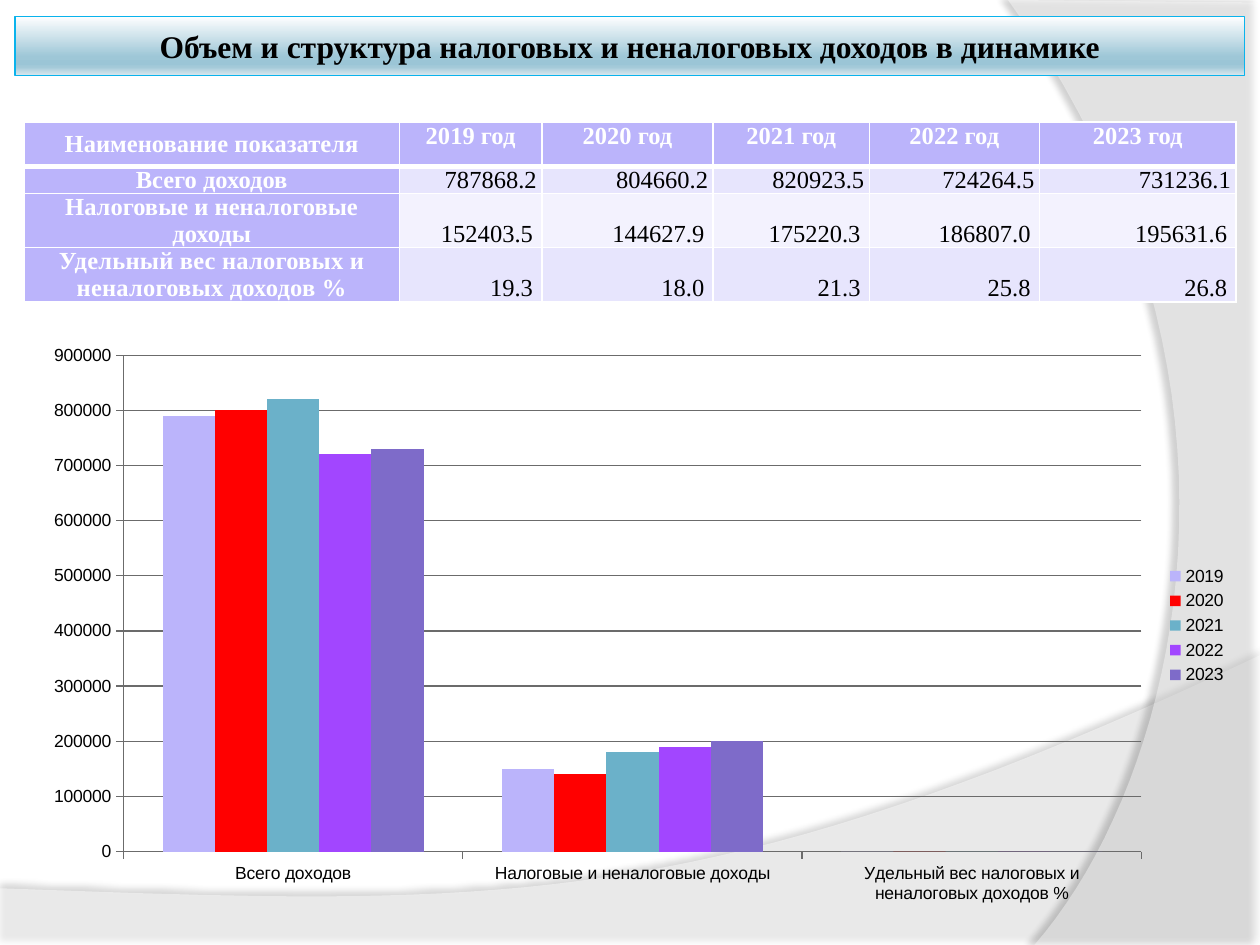
from lxml import etree
from pptx import Presentation
from pptx.chart.data import CategoryChartData
from pptx.dml.color import RGBColor
from pptx.enum.chart import XL_CHART_TYPE, XL_LEGEND_POSITION, XL_TICK_MARK
from pptx.enum.text import MSO_ANCHOR, PP_ALIGN
from pptx.oxml import parse_xml
from pptx.oxml.ns import nsdecls, qn
from pptx.util import Inches, Pt

CENTER, RIGHT = PP_ALIGN.CENTER, PP_ALIGN.RIGHT
TOP, MIDDLE, BOTTOM = MSO_ANCHOR.TOP, MSO_ANCHOR.MIDDLE, MSO_ANCHOR.BOTTOM
CLUSTERED = XL_CHART_TYPE.COLUMN_CLUSTERED
LEGEND_RIGHT = XL_LEGEND_POSITION.RIGHT
OUTSIDE, NO_TICK = XL_TICK_MARK.OUTSIDE, XL_TICK_MARK.NONE

SERIF, SANS = "Times New Roman", "Arial"
WHITE, BLACK, LILAC, GRAY = "FFFFFF", "000000", "BBB4FB", "6B6B6B"
TITLE = "Объем и структура налоговых и неналоговых доходов в динамике"
TITLE_STOPS = [(0, "FEFEFF"), (68, "9EC7D7"), (81, "9BC5D6"), (86, "A5CAD9"), (100, "DAE8EE")]
YEARS = ["2019", "2020", "2021", "2022", "2023"]
SERIES_COLORS = [LILAC, "FF0000", "6BB1C9", "A246FF", "7E6BC9"]
INDICATORS = {
    "Всего доходов": [787868.2, 804660.2, 820923.5, 724264.5, 731236.1],
    "Налоговые и неналоговые доходы": [152403.5, 144627.9, 175220.3, 186807.0, 195631.6],
    "Удельный вес налоговых и неналоговых доходов %": [19.3, 18.0, 21.3, 25.8, 26.8],
}
ROW_FILLS = ["E7E5FD", "F3F2FE", "E7E5FD"]
COLUMN_WIDTHS = [2.98, 1.13, 1.36, 1.24, 1.35, 1.56]
ROW_HEIGHTS = [0.35, 0.21, 0.42, 0.42]
UNITS_PER_INCH = 1000


def color(value):
    return RGBColor.from_string(value)


def set_solid(fill, value):
    fill.solid()
    fill.fore_color.rgb = color(value)


def write(frame, text, size, value, bold, alignment):
    paragraph = frame.paragraphs[0]
    paragraph.alignment = alignment
    run = paragraph.add_run()
    run.text = text
    run.font.name = SERIF
    run.font.size = Pt(size)
    run.font.bold = bold
    run.font.color.rgb = color(value)
    return run


def curve(points, steps=40):
    weights = (1, 3, 3, 1)
    result = []
    for step in range(1, steps + 1):
        t = step / steps
        factors = [w * (1 - t) ** (3 - i) * t ** i for i, w in enumerate(weights)]
        result.append(tuple(sum(f * p[axis] for f, p in zip(factors, points)) for axis in (0, 1)))
    return result


def add_wave(slide, points, opacity, shadow_opacity, distance, direction):
    units = [(round(x * UNITS_PER_INCH), round(y * UNITS_PER_INCH)) for x, y in points]
    builder = slide.shapes.build_freeform(*units[0], scale=Inches(1) / UNITS_PER_INCH)
    builder.add_line_segments(units[1:], close=True)
    wave = builder.convert_to_shape()
    set_solid(wave.fill, WHITE)
    wave.line.fill.background()
    properties = wave._element.spPr
    fill_color = properties.find(qn("a:solidFill"))[0]
    etree.SubElement(fill_color, qn("a:alpha")).set("val", str(opacity * 1000))
    properties.append(parse_xml(
        f'<a:effectLst {nsdecls("a")}><a:outerShdw blurRad="{Pt(4)}" dist="{Pt(distance)}" '
        f'dir="{direction * 60000}" algn="ctr" rotWithShape="0"><a:srgbClr val="{BLACK}">'
        f'<a:alpha val="{shadow_opacity * 1000}"/></a:srgbClr></a:outerShdw></a:effectLst>'))
    return wave


def add_background(slide):
    set_solid(slide.background.fill, WHITE)
    bottom_wave = [(0, 7.05), (0, 7.51), (10, 7.51), (10, 5.2)]
    bottom_wave += curve([(10, 5.2), (5.59, 7.29), (3.91, 7.19), (0, 7.05)])
    right_wave = [(10, 0.02), (10, 7.5), (8.21, 7.5)]
    right_wave += curve([(8.21, 7.5), (9.35, 6.19), (10.18, 3), (8, 0)])
    waves = [add_wave(slide, bottom_wave, 45, 35, 3.5, 270),
             add_wave(slide, right_wave, 40, 45, 4, 180)]
    for index, wave in enumerate(waves, start=2):
        slide.shapes._spTree.insert(index, wave._element)


def add_title(slide, left, top, width, height):
    title = slide.shapes.title
    title.left, title.top = Inches(left), Inches(top)
    title.width, title.height = Inches(width), Inches(height)
    title.fill.gradient()
    title.fill.gradient_angle = 270
    stops = title._element.spPr.find(qn("a:gradFill")).find(qn("a:gsLst"))
    for stop in list(stops):
        stops.remove(stop)
    for position, value in TITLE_STOPS:
        stop = etree.SubElement(stops, qn("a:gs"), pos=str(position * 1000))
        etree.SubElement(stop, qn("a:srgbClr"), val=value)
    title.line.color.rgb = color("0AB3EC")
    title.line.width = Pt(0.75)
    title.text_frame.vertical_anchor = MIDDLE
    title.text_frame.word_wrap = True
    write(title.text_frame, TITLE, 18, BLACK, True, CENTER)


def set_borders(cell, top, bottom):
    properties = cell._tc.get_or_add_tcPr()
    sides = [("lnL", 1), ("lnR", 1), ("lnT", top), ("lnB", bottom)]
    for index, (side, width) in enumerate(sides):
        properties.insert(index, parse_xml(
            f'<a:{side} {nsdecls("a")} w="{Pt(width)}"><a:solidFill>'
            f'<a:srgbClr val="{WHITE}"/></a:solidFill></a:{side}>'))


def add_table(slide, left, top, width, height):
    rows = [["Наименование показателя"] + [f"{year} год" for year in YEARS]]
    rows += [[name] + [f"{value:.1f}" for value in values] for name, values in INDICATORS.items()]
    table = slide.shapes.add_table(len(rows), len(rows[0]), Inches(left), Inches(top),
                                   Inches(width), Inches(height)).table
    for column, column_width in zip(table.columns, COLUMN_WIDTHS):
        column.width = Inches(column_width)
    for row, row_height in zip(table.rows, ROW_HEIGHTS):
        row.height = Inches(row_height)
    for r, texts in enumerate(rows):
        for c, text in enumerate(texts):
            cell = table.cell(r, c)
            heading = r == 0 or c == 0
            set_solid(cell.fill, LILAC if heading else ROW_FILLS[r - 1])
            set_borders(cell, 3 if r == 1 else 1, 3 if r == 0 else 1)
            cell.margin_left = cell.margin_right = Inches(0.04 if r == 1 and c else 0.07)
            cell.margin_top = cell.margin_bottom = 0
            cell.vertical_anchor = MIDDLE if c == 0 else TOP if r == 0 else BOTTOM
            run = write(cell.text_frame, text, 14, WHITE if heading else BLACK, heading,
                        CENTER if heading else RIGHT)
            if r == 3 and c == 0:
                run.font._element.set("spc", "10")


def set_plot_layout(chart, x, y, width, height):
    plot_area = chart._chartSpace.chart.plotArea
    for layout in plot_area.findall(qn("c:layout")):
        plot_area.remove(layout)
    plot_area.insert(0, parse_xml(
        f'<c:layout {nsdecls("c")}><c:manualLayout><c:layoutTarget val="inner"/>'
        f'<c:xMode val="edge"/><c:yMode val="edge"/><c:x val="{x}"/><c:y val="{y}"/>'
        f'<c:w val="{width}"/><c:h val="{height}"/></c:manualLayout></c:layout>'))


def add_income_chart(slide, left, top, width, height):
    data = CategoryChartData(number_format="General")
    data.categories = list(INDICATORS)
    for year, values in zip(YEARS, zip(*INDICATORS.values())):
        data.add_series(year, [int(round(value, -4)) for value in values])
    chart = slide.shapes.add_chart(CLUSTERED, Inches(left), Inches(top), Inches(width),
                                   Inches(height), data).chart
    chart.has_title = False
    chart.font.name = SANS
    chart.font.size = Pt(10)
    chart.font.color.rgb = color(BLACK)
    chart.has_legend = True
    chart.legend.position = LEGEND_RIGHT
    chart.legend.include_in_layout = False
    plot = chart.plots[0]
    plot.gap_width = 150
    plot.overlap = 0
    plot.vary_by_categories = False
    for series, value in zip(plot.series, SERIES_COLORS):
        set_solid(series.format.fill, value)
    value_axis = chart.value_axis
    value_axis.minimum_scale, value_axis.maximum_scale = 0, 900000
    value_axis.major_unit = 100000
    value_axis.has_major_gridlines = True
    for axis in (chart.category_axis, value_axis):
        axis.major_tick_mark = OUTSIDE
        axis.minor_tick_mark = NO_TICK
    for item in (chart.category_axis, value_axis, value_axis.major_gridlines):
        item.format.line.color.rgb = color(GRAY)
        item.format.line.width = Pt(0.75)
    set_plot_layout(chart, 0.75 / width, 0.16 / height, 8.08 / width, 3.94 / height)


def main():
    presentation = Presentation()
    presentation.slide_width, presentation.slide_height = Inches(10), Inches(7.5)
    slide = presentation.slides.add_slide(presentation.slide_layouts[5])
    add_background(slide)
    add_title(slide, 0.12, 0.13, 9.76, 0.47)
    add_table(slide, 0.19, 0.97, 9.62, 1.4)
    add_income_chart(slide, 0.23, 2.66, 9.61, 4.61)
    presentation.save("out.pptx")


if __name__ == "__main__":
    main()
